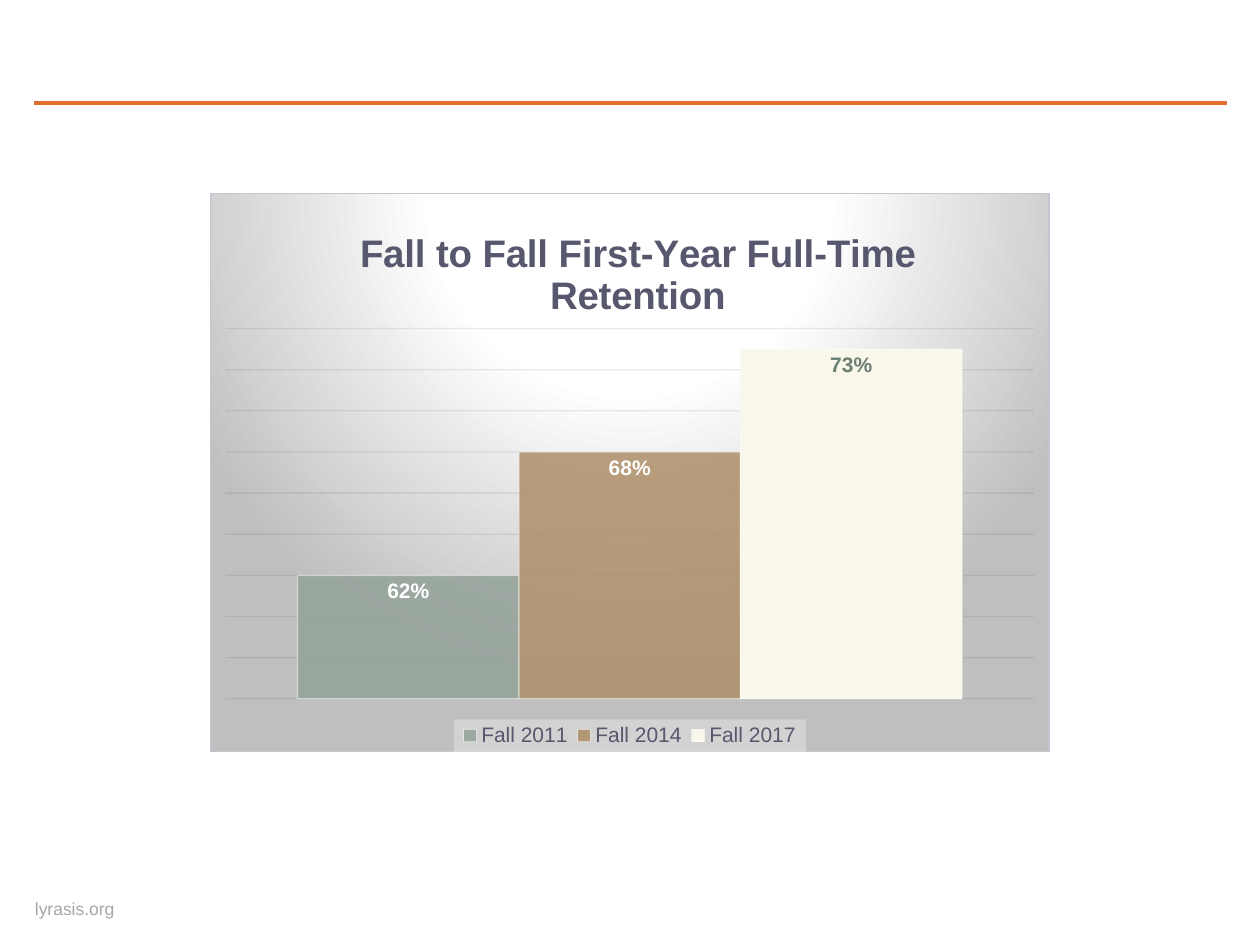
"""Build a slide with a column chart of first-year full-time retention."""
from dataclasses import dataclass

from lxml import etree
from pptx import Presentation
from pptx.chart.data import CategoryChartData
from pptx.dml.color import RGBColor
from pptx.enum.chart import XL_CHART_TYPE, XL_LABEL_POSITION, XL_LEGEND_POSITION
from pptx.enum.shapes import MSO_CONNECTOR
from pptx.enum.text import MSO_ANCHOR, PP_ALIGN
from pptx.oxml import parse_xml
from pptx.oxml.ns import nsdecls, qn
from pptx.util import Cm, Pt

COLUMNS = XL_CHART_TYPE.COLUMN_CLUSTERED
INSIDE_END = XL_LABEL_POSITION.INSIDE_END
BOTTOM = XL_LEGEND_POSITION.BOTTOM
STRAIGHT = MSO_CONNECTOR.STRAIGHT
MIDDLE = MSO_ANCHOR.MIDDLE
CENTER = PP_ALIGN.CENTER

ORANGE = RGBColor(0xE1, 0x6D, 0x2E)
GRAY = RGBColor(0xA6, 0xA6, 0xA6)
INK = RGBColor(0x29, 0x29, 0x34)
SLATE = RGBColor(0x57, 0x57, 0x6E)
GRID = RGBColor(0x32, 0x32, 0x40)
SAGE = RGBColor(0x93, 0xA2, 0x99)
TAN = RGBColor(0xAD, 0x8F, 0x67)
CREAM = RGBColor(0xF8, 0xF7, 0xEA)
MOSS = RGBColor(0x6B, 0x7D, 0x72)
WHITE = RGBColor(0xFF, 0xFF, 0xFF)

CHART_FILL = f"""<c:spPr {nsdecls('c', 'a')}>
  <a:gradFill><a:gsLst>
    <a:gs pos="0"><a:srgbClr val="FFFFFF"/></a:gs>
    <a:gs pos="39000"><a:srgbClr val="FFFFFF"/></a:gs>
    <a:gs pos="100000"><a:srgbClr val="BFBFBF"/></a:gs>
  </a:gsLst><a:path path="circle">
    <a:fillToRect l="50000" t="-80000" r="50000" b="180000"/>
  </a:path></a:gradFill>
  <a:ln w="9525"><a:solidFill><a:srgbClr val="C5C5D1"/></a:solidFill></a:ln>
</c:spPr>"""
LEGEND_FILL = f"""<c:spPr {nsdecls('c', 'a')}><a:solidFill>
  <a:srgbClr val="F2F2F2"><a:alpha val="39000"/></a:srgbClr>
</a:solidFill></c:spPr>"""


@dataclass
class Term:
    name: str
    rate: float
    color: RGBColor
    opacity: int
    label_color: RGBColor


TERMS = [
    Term("Fall 2011", 0.62, SAGE, 85, WHITE),
    Term("Fall 2014", 0.68, TAN, 85, WHITE),
    Term("Fall 2017", 0.73, CREAM, 100, MOSS),
]


def style_font(font, size: float, color: RGBColor, bold: bool = False) -> None:
    values = {"name": "Arial", "size": Pt(size), "bold": bold}
    for name, value in values.items():
        setattr(font, name, value)
    font.color.rgb = color


def set_opacity(fill_parent, percent: int) -> None:
    color = fill_parent.find(f"{qn('a:solidFill')}/{qn('a:srgbClr')}")
    etree.SubElement(color, qn("a:alpha"), val=str(percent * 1000))


def make_layout(inner: bool = False, **parts: float):
    layout = parse_xml(f"<c:layout {nsdecls('c')}><c:manualLayout/></c:layout>")
    manual = layout[0]
    if inner:
        etree.SubElement(manual, qn("c:layoutTarget"), val="inner")
    for side in ("x", "y"):
        etree.SubElement(manual, qn(f"c:{side}Mode"), val="edge")
    for side, value in parts.items():
        etree.SubElement(manual, qn(f"c:{side}"), val=str(value))
    return layout


def place_parts(space) -> None:
    for old in space.xpath(".//c:layout"):
        old.getparent().remove(old)
    plot_area = space.xpath(".//c:plotArea")[0]
    plot_area.insert(0, make_layout(True, x=0.018, y=0.242, w=0.964, h=0.663))
    legend_position = space.xpath(".//c:legendPos")[0]
    legend_position.addnext(make_layout(x=0.29, y=0.942, w=0.42, h=0.058))
    title_text = space.xpath("./c:chart/c:title/c:tx")[0]
    title_text.addnext(make_layout(x=0.17, y=0.05))


def format_axes(chart) -> None:
    chart.category_axis.visible = False
    axis = chart.value_axis
    values = {"visible": False, "minimum_scale": 0.56, "maximum_scale": 0.74,
              "major_unit": 0.02, "has_major_gridlines": True}
    for name, value in values.items():
        setattr(axis, name, value)
    axis.tick_labels.number_format = "0%"
    axis.tick_labels.number_format_is_linked = False
    line = axis.major_gridlines.format.line
    line.width = Pt(0.75)
    line.color.rgb = GRID


def format_term(series, term: Term) -> None:
    series.format.fill.solid()
    series.format.fill.fore_color.rgb = term.color
    series.format.line.width = Pt(0.75)
    series.format.line.color.rgb = WHITE
    values = {"show_value": True, "position": INSIDE_END,
              "number_format": "0%", "number_format_is_linked": False}
    for name, value in values.items():
        setattr(series.data_labels, name, value)
    style_font(series.data_labels.font, 12, term.label_color, True)


def add_retention_chart(page) -> None:
    data = CategoryChartData(number_format="0%")
    data.categories = ["1"]
    for term in TERMS:
        data.add_series(term.name, [term.rate])
    chart = page.shapes.add_chart(
        COLUMNS, Cm(4.23), Cm(3.89), Cm(16.93), Cm(11.28), data).chart
    style_font(chart.font, 10, INK)
    chart.has_title = True
    title = chart.chart_title.text_frame
    title.text = "Fall to Fall First-Year Full-Time Retention"
    style_font(title.paragraphs[0].runs[0].font, 22, SLATE, True)
    chart.has_legend = True
    chart.legend.position = BOTTOM
    chart.legend.include_in_layout = False
    style_font(chart.legend.font, 12, SLATE)
    format_axes(chart)
    plot = chart.plots[0]
    plot.gap_width = 65
    plot.overlap = 0
    plot.vary_by_categories = False
    for series, term in zip(plot.series, TERMS):
        format_term(series, term)

    space = chart.element
    for shape_format, term in zip(space.xpath(".//c:ser/c:spPr"), TERMS):
        set_opacity(shape_format, term.opacity)
        set_opacity(shape_format.find(qn("a:ln")), 50)
    set_opacity(space.xpath(".//c:majorGridlines/c:spPr/a:ln")[0], 10)
    place_parts(space)
    space.xpath("./c:chart")[0].addnext(parse_xml(CHART_FILL))
    space.xpath(".//c:legend/c:overlay")[0].addnext(parse_xml(LEGEND_FILL))


def add_rule(page) -> None:
    rule = page.shapes.add_connector(
        STRAIGHT, Cm(0.69), Cm(2.08), Cm(24.74), Cm(2.08))
    rule.line.width = Pt(2.08)
    rule.line.color.rgb = ORANGE
    etree.SubElement(rule.element.spPr, qn("a:effectLst"))


def add_footer(page) -> None:
    box = page.shapes.add_textbox(Cm(0.69), Cm(18.11), Cm(1.63), Cm(0.43))
    frame = box.text_frame
    values = {"margin_left": 0, "margin_right": 0, "margin_top": 0,
              "margin_bottom": 0, "vertical_anchor": MIDDLE, "word_wrap": False}
    for name, value in values.items():
        setattr(frame, name, value)
    para = frame.paragraphs[0]
    para.alignment = CENTER
    span = para.add_run()
    span.text = "lyrasis.org"
    style_font(span.font, 10, GRAY)


def main() -> None:
    deck = Presentation()
    deck.slide_width, deck.slide_height = Cm(25.4), Cm(19.05)
    page = deck.slides.add_slide(deck.slide_layouts[6])
    add_rule(page)
    add_footer(page)
    add_retention_chart(page)
    deck.save("out.pptx")


if __name__ == "__main__":
    main()
